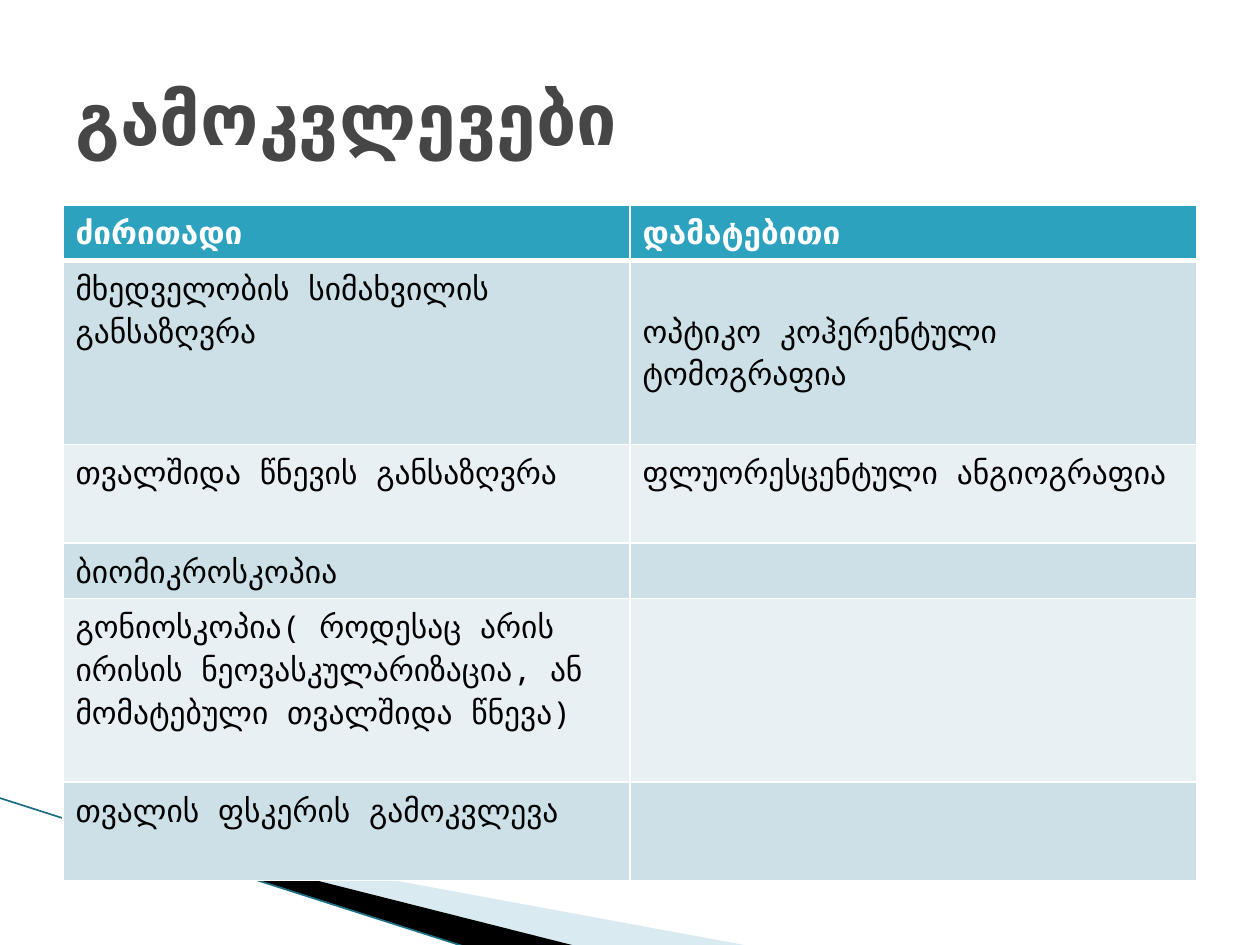
from lxml import etree
from pptx import Presentation
from pptx.dml.color import RGBColor
from pptx.enum.shapes import MSO_CONNECTOR
from pptx.enum.text import MSO_ANCHOR, MSO_AUTO_SIZE, PP_ALIGN
from pptx.oxml.ns import qn
from pptx.util import Cm, Pt

STRAIGHT = MSO_CONNECTOR.STRAIGHT
MIDDLE = MSO_ANCHOR.MIDDLE
NO_AUTOFIT = MSO_AUTO_SIZE.NONE
LEFT = PP_ALIGN.LEFT

WHITE = RGBColor(0xFF, 0xFF, 0xFF)
BLACK = RGBColor(0, 0, 0)
TITLE_GRAY = RGBColor(0x46, 0x46, 0x46)
HEADER_TEAL = RGBColor(0x2D, 0xA2, 0xBF)
BAND_DARK = RGBColor(0xCD, 0xE0, 0xE8)
BAND_LIGHT = RGBColor(0xE8, 0xF0, 0xF4)
SWOOSH_BLUE = RGBColor(0xA0, 0xCB, 0xDC)
EDGE_TEAL = RGBColor(0x1A, 0x6F, 0x82)
FONT = "Noto Sans Mono"


def add_text(paragraph, text, size, color, bold):
    run = paragraph.add_run()
    run.text = text
    run.font.name = FONT
    run.font.size = Pt(size)
    run.font.bold = bold
    run.font.color.rgb = color


def add_border(cell, side, width):
    """Add a white cell border; side is one of L, R, T, B, called in that order."""
    properties = cell._tc.get_or_add_tcPr()
    line = etree.SubElement(properties, qn(f"a:ln{side}"), w=str(Pt(width)))
    fill = etree.SubElement(line, qn("a:solidFill"))
    etree.SubElement(fill, qn("a:srgbClr"), val=str(WHITE))


prs = Presentation()
prs.slide_width, prs.slide_height = Cm(25.4), Cm(19.05)
slide = prs.slides.add_slide(prs.slide_layouts[5])

# Corner decoration, behind the table
swooshes = [
    (SWOOSH_BLUE, 40, [(1.4, 16.54), (15.11, 19.07), (11.58, 19.07), (1.4, 16.51)]),
    (BLACK, 100, [(1.35, 16.48), (11.61, 19.07), (9.45, 19.1), (1.37, 16.51)]),
]
for color, opacity, points in swooshes:
    corners = [(Cm(x), Cm(y)) for x, y in points]
    builder = slide.shapes.build_freeform(*corners[0])
    builder.add_line_segments(corners[1:], close=True)
    swoosh = builder.convert_to_shape()
    swoosh.shadow.inherit = False
    swoosh.line.fill.background()
    swoosh.fill.solid()
    swoosh.fill.fore_color.rgb = color
    if opacity < 100:
        color_element = swoosh._element.spPr.find(f".//{qn('a:srgbClr')}")
        etree.SubElement(color_element, qn("a:alpha"), val=str(opacity * 1000))

edge = slide.shapes.add_connector(STRAIGHT, Cm(-0.03), Cm(16.08), Cm(9.42), Cm(19.1))
edge.line.color.rgb = EDGE_TEAL
edge.line.width = Pt(0.95)
etree.SubElement(edge._element.spPr, qn("a:effectLst"))

# Title
title = slide.shapes.title
title.left, title.top, title.width, title.height = Cm(1.27), Cm(0.76), Cm(22.86), Cm(3.18)
title.text_frame.auto_size = NO_AUTOFIT
title.text_frame.vertical_anchor = MIDDLE
heading = title.text_frame.paragraphs[0]
heading.alignment = LEFT
add_text(heading, "გამოკვლევები", 41, TITLE_GRAY, True)

# Table of examinations: row height, basic, additional
examinations = [
    (1.09, "ძირითადი", "დამატებითი"),
    (3.71, "მხედველობის სიმახვილის განსაზღვრა", "ოპტიკო კოჰერენტული ტომოგრაფია"),
    (1.99, "თვალშიდა წნევის განსაზღვრა", "ფლუორესცენტული ანგიოგრაფია"),
    (1.12, "ბიომიკროსკოპია", ""),
    (3.7, "გონიოსკოპია( როდესაც არის ირისის ნეოვასკულარიზაცია, "
          "ან მომატებული თვალშიდა წნევა)", ""),
    (1.98, "თვალის ფსკერის გამოკვლევა", ""),
]
total_height = sum(height for height, *_ in examinations)
table = slide.shapes.add_table(
    len(examinations), 2, Cm(1.27), Cm(4.13), Cm(22.86), Cm(total_height)
).table

for row, (height, *texts) in enumerate(examinations):
    table.rows[row].height = Cm(height)
    is_header = row == 0
    band = HEADER_TEAL if is_header else (BAND_LIGHT, BAND_DARK)[row % 2]
    widths = {"L": 1, "R": 1, "T": 3 if row == 1 else 1, "B": 3 if is_header else 1}
    for column, text in enumerate(texts):
        cell = table.cell(row, column)
        for side, width in widths.items():
            add_border(cell, side, width)
        cell.fill.solid()
        cell.fill.fore_color.rgb = band
        if text:
            add_text(cell.text_frame.paragraphs[0], text, 18,
                     WHITE if is_header else BLACK, is_header)

table.cell(1, 1).vertical_anchor = MIDDLE

prs.save("out.pptx")
